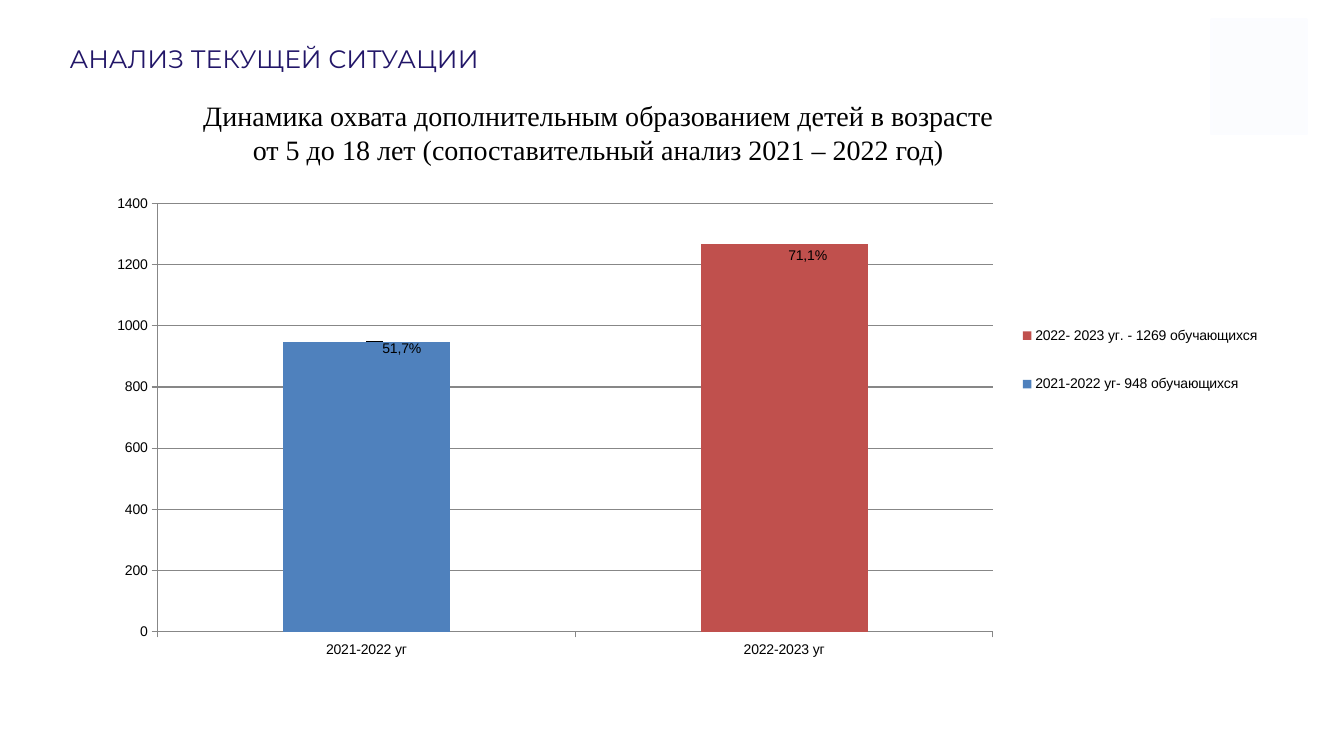
from lxml import etree
from pptx import Presentation
from pptx.chart.data import CategoryChartData
from pptx.dml.color import RGBColor
from pptx.enum import chart as ch, shapes, text
from pptx.oxml import ns
from pptx.util import Inches, Pt

NAVY = RGBColor(0x22, 0x16, 0x68)
BLACK = RGBColor(0, 0, 0)
GRAY = RGBColor(0x87, 0x87, 0x87)
PALE = RGBColor(0xFB, 0xFC, 0xFE)
EDGE = RGBColor(0xFB, 0xFC, 0xFF)
BLUE = RGBColor(0x4F, 0x81, 0xBD)
RED = RGBColor(0xC0, 0x50, 0x4D)

TITLE = ["АНАЛИЗ ТЕКУЩЕЙ СИТУАЦИИ"]
HEAD = [
    "Динамика охвата дополнительным образованием детей в возрасте",
    "от 5 до 18 лет (сопоставительный анализ 2021 – 2022 год)",
]
YEARS = ["2021-2022 уг", "2022-2023 уг"]
# legend name, pupils, share, colour, label shift (parts of the chart)
BARS = [
    ("2021-2022 уг- 948 обучающихся", 948, "51,7%", BLUE, (0.03, -0.01)),
    ("2022- 2023 уг. - 1269 обучающихся", 1269, "71,1%", RED, (0.02, 0)),
]
PLOT = (0.05, 0.04, 0.71, 0.89)
LEGEND = (0.78, 0.23, 0.21, 0.27)


def box(*nums):
    return [Inches(n) for n in nums]


def write(frame, lines, font, size, color, align=text.PP_ALIGN.LEFT):
    frame.word_wrap = True
    for i, line in enumerate(lines):
        para = frame.paragraphs[0] if i == 0 else frame.add_paragraph()
        para.alignment = align
        run = para.add_run()
        run.text = line
        run.font.name, run.font.size = font, Pt(size)
        run.font.bold = False
        run.font.color.rgb = color


def layout(nums, **modes):
    """Make a manual chart layout from x, y and optional width, height."""
    outer = etree.Element(ns.qn("c:layout"))
    inner = etree.SubElement(outer, ns.qn("c:manualLayout"))
    for tag, val in [*modes.items(), *zip("xywh", nums)]:
        etree.SubElement(inner, ns.qn("c:" + tag)).set("val", str(val))
    return outer


def style(chart):
    chart.has_title = False
    chart.font.name, chart.font.size = "Arial", Pt(10)
    chart.font.color.rgb = BLACK
    chart.has_legend = True
    chart.legend.position = ch.XL_LEGEND_POSITION.RIGHT
    chart.legend.include_in_layout = False
    for axis in (chart.category_axis, chart.value_axis):
        axis.major_tick_mark = ch.XL_TICK_MARK.OUTSIDE
        axis.minor_tick_mark = ch.XL_TICK_MARK.NONE
        axis.format.line.color.rgb = GRAY
    axis = chart.value_axis
    axis.minimum_scale, axis.maximum_scale, axis.major_unit = 0, 1400, 200
    axis.has_major_gridlines = True
    axis.major_gridlines.format.line.color.rgb = GRAY

    area = chart.plots[0]._element.getparent()
    for old in area.findall(ns.qn("c:layout")):
        area.remove(old)
    area.insert(0, layout(PLOT, layoutTarget="inner", xMode="edge", yMode="edge"))
    key = chart.legend._element
    for old in key.findall(ns.qn("c:layout")):
        key.remove(old)
    key.find(ns.qn("c:legendPos")).addnext(layout(LEGEND, xMode="edge", yMode="edge"))


def paint(plot):
    plot.gap_width, plot.overlap = 150, 100
    plot.vary_by_categories = False
    for i, (bar, (_, _, share, color, shift)) in enumerate(zip(plot.series, BARS)):
        bar.format.fill.solid()
        bar.format.fill.fore_color.rgb = color
        bar.data_labels.show_value = True
        label = bar.points[i].data_label
        label.text_frame.text = share
        label.position = ch.XL_LABEL_POSITION.INSIDE_END
        node = bar.data_labels._element.find(ns.qn("c:dLbl"))
        node.find(ns.qn("c:idx")).addnext(layout(shift))


def main():
    deck = Presentation()
    deck.slide_width, deck.slide_height = box(13.33, 7.5)
    slide = deck.slides.add_slide(deck.slide_layouts[5])

    title = slide.shapes.title
    title.left, title.top, title.width, title.height = box(0.56, 0.28, 9.91, 0.59)
    frame = title.text_frame
    frame.margin_left = frame.margin_right = Inches(0.13)
    frame.margin_top = frame.margin_bottom = Inches(0.07)
    frame.vertical_anchor = text.MSO_ANCHOR.MIDDLE
    write(frame, TITLE, "Montserrat", 18, NAVY)

    patch = slide.shapes.add_shape(
        shapes.MSO_SHAPE.RECTANGLE, *box(12.02, 0.19, 0.94, 1.14))
    patch.shadow.inherit = False
    patch.fill.solid()
    patch.fill.fore_color.rgb = PALE
    patch.line.color.rgb, patch.line.width = EDGE, Pt(2)

    head = slide.shapes.add_textbox(*box(1.36, 0.93, 9.15, 1.72))
    write(head.text_frame, HEAD, "Times New Roman", 20, BLACK, text.PP_ALIGN.CENTER)

    data = CategoryChartData()
    data.categories = YEARS
    for i, (name, count, *_) in enumerate(BARS):
        data.add_series(name, [count if i == j else None for j in range(len(YEARS))])
    chart = slide.shapes.add_chart(
        ch.XL_CHART_TYPE.COLUMN_STACKED, *box(0.98, 1.83, 11.67, 4.77), data).chart
    style(chart)
    paint(chart.plots[0])
    deck.save("out.pptx")


if __name__ == "__main__":
    main()
